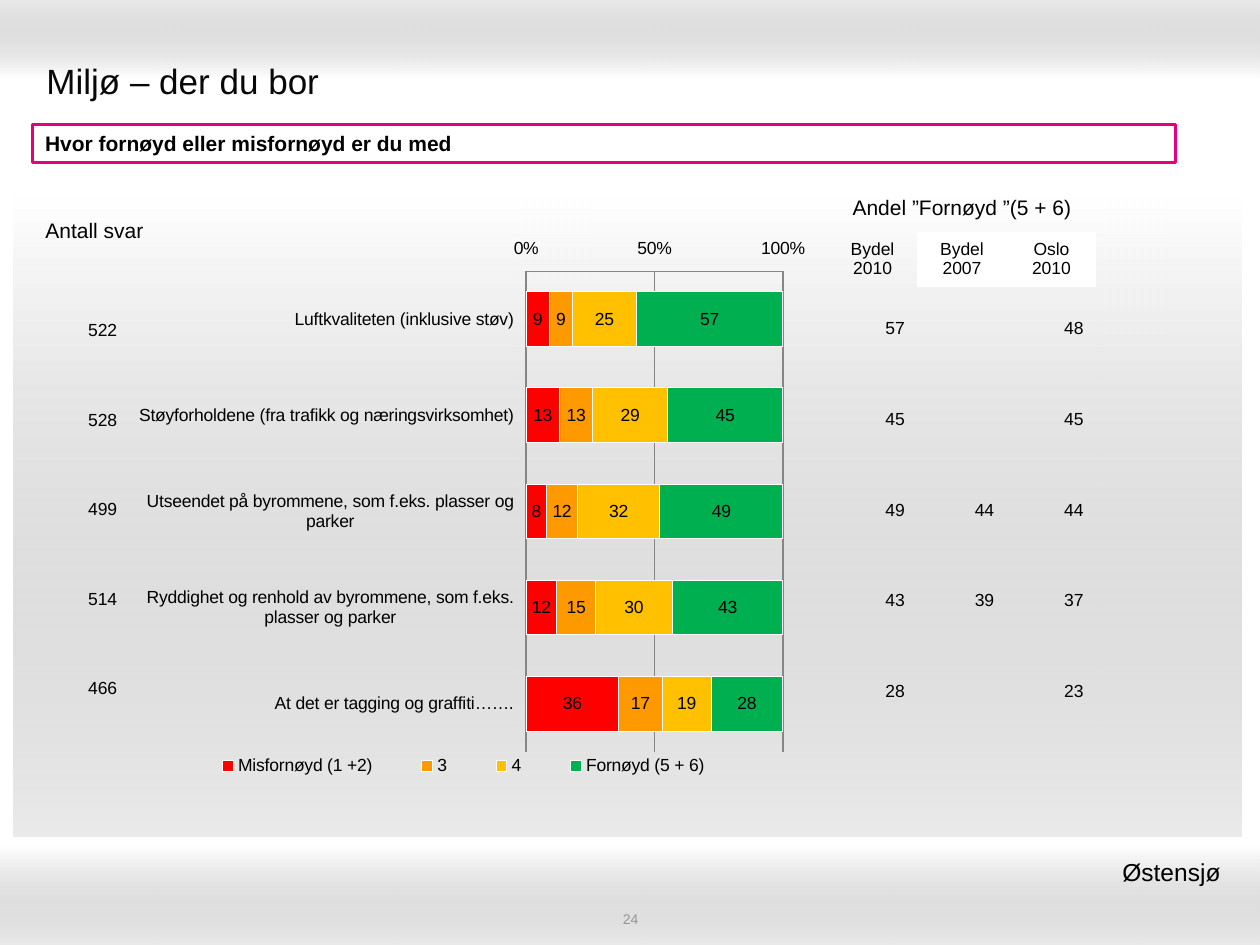
from lxml import etree
from pptx import Presentation
from pptx import util as u
from pptx.chart.data import CategoryChartData
from pptx.dml.color import RGBColor
from pptx.enum import chart as ch, shapes, text
from pptx.oxml import parse_xml
from pptx.oxml.ns import nsdecls, qn

HUES = {"white": "FFFFFF", "black": "000000", "title": "080808", "page": "969696",
        "band": "999999", "pink": "E7007E", "grid": "868686", "red": "FF0000",
        "orange": "FF9900", "yellow": "FFC000", "green": "00B050"}
BANDS = [((0, 0, 10, 0.62), 270), ((0, 6.72, 10, 0.78), 90), ((0.11, 1.56, 9.74, 5.08), 90)]
CATS = ["Luftkvaliteten (inklusive støv)",
        "Støyforholdene (fra trafikk og næringsvirksomhet)",
        "Utseendet på byrommene, som f.eks. plasser og parker",
        "Ryddighet og renhold av byrommene, som f.eks. plasser og parker",
        "At det er tagging og graffiti……."]
SERIES = [("Misfornøyd (1 +2)", "red", (9, 13, 8, 12, 36)),
          ("3", "orange", (9, 13, 12, 15, 17)),
          ("4", "yellow", (25, 29, 32, 30, 19)),
          ("Fornøyd (5 + 6)", "green", (57, 45, 49, 43, 28))]
SHARES = [("57", "", "48"), ("45", "", "45"), ("49", "44", "44"),
          ("43", "39", "37"), ("28", "", "23")]
HEADS = [("Andel ”Fornøyd ”(5 + 6)", "", ""),
         ("Bydel\n2010", "Bydel\n2007", "Oslo\n2010")]
COUNTS = [("522",), ("528",), ("499",), ("514",), ("466",)]
LEFT, MID, RIGHT = text.PP_ALIGN.LEFT, text.PP_ALIGN.CENTER, text.PP_ALIGN.RIGHT
PLAIN = "{2D5ABB26-0587-4C30-8999-92F81FD0307C}"


def rgb(name):
    return RGBColor.from_string(HUES[name])


def inches(box):
    return [u.Inches(n) for n in box]


def style(font, size, hue="black", bold=False):
    font.name, font.size, font.bold = "Arial", u.Pt(size), bold
    font.color.rgb = rgb(hue)


def write(frame, words, size, align, hue="black", bold=False):
    for n, line in enumerate(words.split("\n")):
        para = frame.add_paragraph() if n else frame.paragraphs[0]
        para.alignment = align
        run = para.add_run()
        run.text = line
        style(run.font, size, hue, bold)


def label(box, words, size, align, hue="black", anchor=text.MSO_ANCHOR.MIDDLE):
    frame = slide.shapes.add_textbox(*inches(box)).text_frame
    frame.word_wrap = True
    frame.vertical_anchor = anchor
    write(frame, words, size, align, hue)
    return frame


def rect(box):
    shape = slide.shapes.add_shape(shapes.MSO_SHAPE.RECTANGLE, *inches(box))
    shape.shadow.inherit = False
    return shape


def band(box, angle):
    shape = rect(box)
    shape.line.fill.background()
    shape.fill.solid()
    old = shape._element.spPr.find(qn("a:solidFill"))
    old.getparent().replace(old, parse_xml(
        f'<a:gradFill {nsdecls("a")} rotWithShape="1"><a:gsLst>'
        f'<a:gs pos="0"><a:srgbClr val="{HUES["white"]}"/></a:gs>'
        f'<a:gs pos="100000"><a:srgbClr val="{HUES["band"]}"><a:alpha val="20000"/></a:srgbClr></a:gs>'
        f'</a:gsLst><a:lin ang="{angle * 60000}" scaled="0"/></a:gradFill>'))


def grid(left, top, wide, highs, rows, align, sizes):
    cols = len(rows[0])
    table = slide.shapes.add_table(
        len(rows), cols, *inches((left, top, wide * cols, sum(highs)))).table
    table._tbl.tblPr.find(qn("a:tableStyleId")).text = PLAIN
    table.first_row = table.horz_banding = False
    for col in table.columns:
        col.width = u.Inches(wide)
    for r, row in enumerate(rows):
        table.rows[r].height = u.Inches(highs[r])
        for c, words in enumerate(row):
            cell = table.cell(r, c)
            cell.fill.background()
            cell.vertical_anchor = text.MSO_ANCHOR.MIDDLE
            if words:
                write(cell.text_frame, words, sizes[r], align)
    return table


def place(part, x, y, w, h, inner=False):
    old = part.find(qn("c:layout"))
    if old is not None:
        part.remove(old)
    layout = etree.Element(qn("c:layout"))
    manual = etree.SubElement(layout, qn("c:manualLayout"))
    pairs = [("layoutTarget", "inner")] if inner else []
    pairs += [("xMode", "edge"), ("yMode", "edge"), ("x", x), ("y", y), ("w", w), ("h", h)]
    for tag, val in pairs:
        etree.SubElement(manual, qn("c:" + tag)).set("val", str(val))
    spot = part.find(qn("c:legendPos"))
    part.insert(0 if spot is None else part.index(spot) + 1, layout)


def bars(box):
    data = CategoryChartData()
    data.categories = CATS
    for name, _, vals in SERIES:
        data.add_series(name, vals)
    chart = slide.shapes.add_chart(
        ch.XL_CHART_TYPE.BAR_STACKED, *inches(box), data).chart
    style(chart.font, 10)
    chart.has_title = False
    chart.has_legend = True
    chart.legend.position = ch.XL_LEGEND_POSITION.BOTTOM
    chart.legend.include_in_layout = False
    plot = chart.plots[0]
    plot.gap_width, plot.overlap = 75, 100
    plot.vary_by_categories = False
    for ser, (_, hue, _) in zip(plot.series, SERIES):
        ser.format.fill.solid()
        ser.format.fill.fore_color.rgb = rgb(hue)
        ser.format.line.color.rgb = rgb("white")
        tags = ser.data_labels
        tags.show_value = True
        tags.number_format, tags.number_format_is_linked = "0", False
        style(tags.font, 10)
    cat, val = chart.category_axis, chart.value_axis
    cat.reverse_order = True
    cat.major_tick_mark = ch.XL_TICK_MARK.NONE
    val.major_tick_mark = ch.XL_TICK_MARK.INSIDE
    val.minimum_scale, val.maximum_scale, val.major_unit = 0, 100, 50
    val.has_major_gridlines = True
    val.major_gridlines.format.line.color.rgb = rgb("grid")
    val.tick_labels.number_format = "General\\%"
    val.tick_labels.number_format_is_linked = False
    for axis in (cat, val):
        axis.tick_label_position = ch.XL_TICK_LABEL_POSITION.LOW
        axis.format.line.color.rgb = rgb("grid")
    area = chart._chartSpace.chart
    place(area.plotArea, 0.58, 0.08, 0.37, 0.84, True)
    place(area.find(qn("c:legend")), 0.08, 0.92, 0.82, 0.05)


deck = Presentation()
deck.slide_width, deck.slide_height = u.Inches(10), u.Inches(7.5)
slide = deck.slides.add_slide(deck.slide_layouts[6])
slide.background.fill.solid()
slide.background.fill.fore_color.rgb = rgb("white")

for box, angle in BANDS:
    band(box, angle)
label((0.27, 0.36, 9.45, 0.55), "Miljø – der du bor", 20, LEFT, "title")
page = label((3.42, 7.22, 3.17, 0.14), "24", 8, MID, "page")
page.margin_top = page.margin_bottom = 0

ask = rect((0.26, 0.99, 9.07, 0.3))
ask.fill.solid()
ask.fill.fore_color.rgb = rgb("white")
ask.line.color.rgb, ask.line.width = rgb("pink"), u.Pt(2)
write(ask.text_frame, "Hvor fornøyd eller misfornøyd er du med", 12, LEFT, bold=True)

bars((0.98, 1.79, 5.51, 4.54))
grid(6.57, 2.25, 0.71, [0.72] * 5, SHARES, RIGHT, [10] * 5)
head = grid(6.57, 1.47, 0.71, [0.37, 0.43], HEADS, MID, [12, 10])
head.cell(0, 0).merge(head.cell(0, 2))
for c in (1, 2):
    head.cell(1, c).fill.solid()
    head.cell(1, c).fill.fore_color.rgb = rgb("white")
grid(0.51, 2.27, 0.52, [0.71] * 5, COUNTS, RIGHT, [10] * 5)
grid(0.04, 1.54, 1.42, [0.59], [("Antall svar",)], MID, [12])
label((6.1, 6.75, 3.74, 0.34), "Østensjø ", 14, RIGHT, anchor=text.MSO_ANCHOR.TOP)

deck.save("out.pptx")
